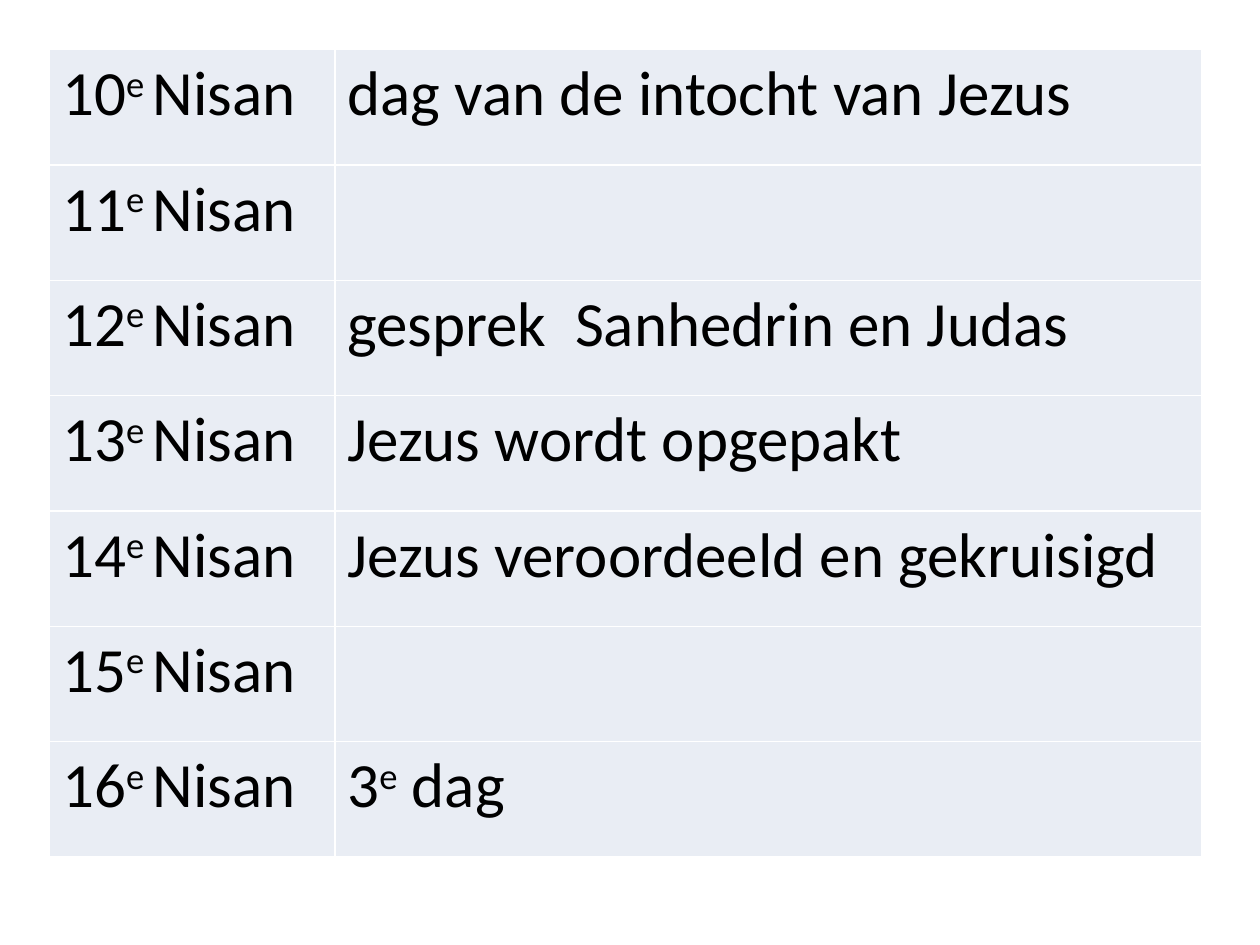
from dataclasses import dataclass

from lxml.etree import SubElement
from pptx import Presentation
from pptx.dml.color import RGBColor as RGB
from pptx.oxml.ns import qn
from pptx.util import Cm, Pt


@dataclass(frozen=True)
class Theme:
    font: str = "Calibri"
    size: int = 36
    text: str = "000000"
    cell: str = "E9EDF4"
    border: str = "FFFFFF"
    border_width: int = 1
    superscript: int = 30


THEME = Theme()
BLANK_LAYOUT = 6

# "^" marks the start and end of superscript text
FIRST_DAY = 10
EVENTS = [
    "dag van de intocht van Jezus",
    "",
    "gesprek  Sanhedrin en Judas",
    "Jezus wordt opgepakt",
    "Jezus veroordeeld en gekruisigd",
    "",
    "3^e^ dag",
]


def write_text(cell, text):
    """Write text as runs, raising the parts between carets."""
    p = cell.text_frame.paragraphs[0]
    p.font.size = Pt(THEME.size)
    font_format = {"name": THEME.font, "size": Pt(THEME.size)}
    for i, part in enumerate(text.split("^")):
        if not part:
            continue
        r = p.add_run()
        r.text = part
        for name, value in font_format.items():
            setattr(r.font, name, value)
        r.font.color.rgb = RGB.from_string(THEME.text)
        if i % 2:
            r._r.get_or_add_rPr().set("baseline", str(THEME.superscript * 1000))


def format_cell(cell):
    """Give a cell its four borders and its fill."""
    tcPr = cell._tc.get_or_add_tcPr()
    for side in ("lnL", "lnR", "lnT", "lnB"):
        ln = SubElement(tcPr, qn(f"a:{side}"), w=str(Pt(THEME.border_width)))
        fill = SubElement(ln, qn("a:solidFill"))
        SubElement(fill, qn("a:srgbClr"), val=THEME.border)
    cell.fill.solid()
    cell.fill.fore_color.rgb = RGB.from_string(THEME.cell)


def add_calendar(slide, left, top, width, height, day_width):
    """Place the table of days and events in the given box."""
    frame = slide.shapes.add_table(len(EVENTS), 2, left, top, width, height)
    table = frame.table
    options = {"first_row": False, "horz_banding": False}
    for name, value in options.items():
        setattr(table, name, value)
    table.columns[0].width = day_width
    table.columns[1].width = width - day_width

    for i, event in enumerate(EVENTS):
        day = f"{FIRST_DAY + i}^e ^Nisan"
        for cell, text in zip(table.rows[i].cells, (day, event)):
            write_text(cell, text)
            format_cell(cell)


def main():
    prs = Presentation()
    prs.slide_width, prs.slide_height = Cm(25.4), Cm(19.05)
    slide = prs.slides.add_slide(prs.slide_layouts[BLANK_LAYOUT])
    add_calendar(slide, Cm(1), Cm(1), Cm(23.22), Cm(16.28), day_width=Cm(5.75))
    prs.save("out.pptx")


if __name__ == "__main__":
    main()
